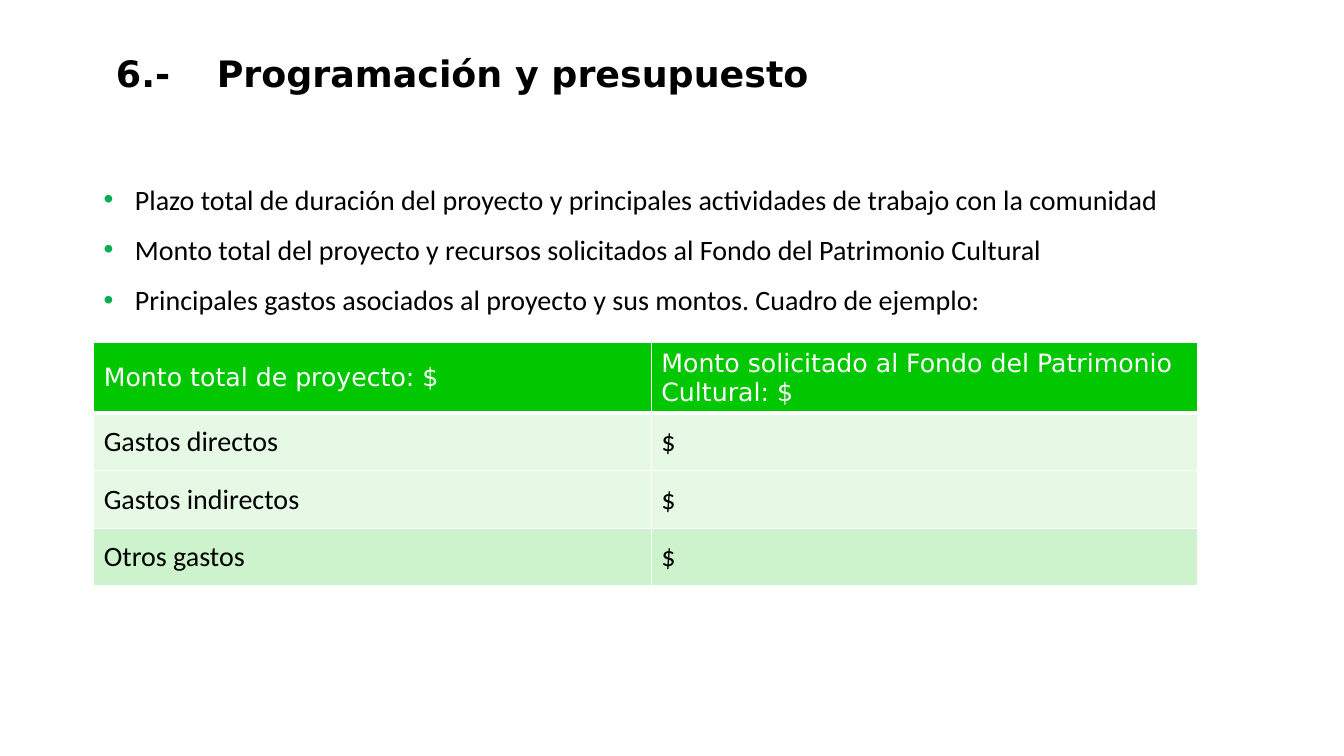
from lxml import etree
from pptx import Presentation, util as u
from pptx.dml.color import RGBColor
from pptx.enum import text as t
from pptx.oxml.ns import qn

HUES = {"ink": "000000", "paper": "FFFFFF", "green": "00C700", "dot": "00B050"}
HEAD = {"name": "DejaVu Sans", "size": u.Pt(26), "bold": True}
TOP = {"name": "DejaVu Sans", "size": u.Pt(18), "bold": False}
BODY = {"name": "Calibri", "size": u.Pt(20), "bold": False}


def add(node, tag, **attrs):
    return etree.SubElement(node, qn(tag), attrs)


def solid(node, hue, alpha=100):
    color = add(add(node, "a:solidFill"), "a:srgbClr", val=HUES[hue])
    if alpha < 100:
        add(color, "a:alpha", val=str(alpha * 1000))


class Deck:
    def __init__(self):
        self.prs = Presentation()
        self.prs.slide_width = u.Inches(13.33)
        self.prs.slide_height = u.Inches(7.5)
        self.slide = self.prs.slides.add_slide(self.prs.slide_layouts[6])

    def label(self, para, words, style, hue="ink"):
        run = para.add_run()
        run.text = words
        for key, val in style.items():
            setattr(run.font, key, val)
        run.font.color.rgb = RGBColor.from_string(HUES[hue])

    def frame(self, box, **form):
        shape = self.slide.shapes.add_textbox(*map(u.Inches, box))
        for key, val in {"word_wrap": True, **form}.items():
            setattr(shape.text_frame, key, val)
        return shape.text_frame

    def title(self, words, box):
        sides = ("left", "top", "right", "bottom")
        form = {f"margin_{side}": 0 for side in sides}
        body = self.frame(box, vertical_anchor=t.MSO_ANCHOR.MIDDLE, **form)
        para = body.paragraphs[0]
        para.line_spacing = 0.9
        tabs = add(para._p.get_or_add_pPr(), "a:tabLst")
        add(tabs, "a:tab", pos=str(u.Inches(1)), algn="l")
        self.label(para, words, HEAD)

    def bullets(self, lines, box):
        body = self.frame(box)
        for i, line in enumerate(lines):
            para = body.add_paragraph() if i else body.paragraphs[0]
            para.line_spacing = 1.5
            props = para._p.get_or_add_pPr()
            dent = u.Inches(0.31)
            props.set("marL", str(dent))
            props.set("indent", str(-dent))
            add(add(props, "a:buClr"), "a:srgbClr", val=HUES["dot"])
            add(props, "a:buFont", typeface="Arial")
            add(props, "a:buChar", char="•")
            self.label(para, line, BODY)

    def cell(self, cell, words, style, hue, alpha, edges):
        cell.vertical_anchor = t.MSO_ANCHOR.MIDDLE
        self.label(cell.text_frame.paragraphs[0], words, style, hue)
        props = cell._tc.get_or_add_tcPr()
        for side, width in edges.items():
            solid(add(props, f"a:ln{side}", w=str(u.Pt(width))), "paper")
        solid(props, "green", alpha)

    def table(self, rows, box, cols, tall, alphas):
        grid = self.slide.shapes.add_table(
            len(rows), len(cols), *map(u.Inches, box)).table
        grid.first_row = grid.horz_banding = False
        for col, wide in zip(grid.columns, cols):
            col.width = u.Inches(wide)
        for r, (row, alpha) in enumerate(zip(rows, alphas)):
            grid.rows[r].height = u.Inches(tall)
            style, hue = (BODY, "ink") if r else (TOP, "paper")
            edges = {"L": 1, "R": 1, "T": 3 if r == 1 else 1,
                     "B": 1 if r else 3}
            for c, words in enumerate(row):
                self.cell(grid.cell(r, c), words, style, hue, alpha, edges)


def main():
    deck = Deck()
    deck.title("6.-\tProgramación y presupuesto", (1.15, 0.16, 12.18, 1.18))
    deck.table([
        ("Monto total de proyecto: $",
         "Monto solicitado al Fondo del Patrimonio Cultural: $"),
        ("Gastos directos", "$"),
        ("Gastos indirectos", "$"),
        ("Otros gastos", "$"),
    ], (0.93, 3.4, 10.95, 2.28), (5.53, 5.42), 0.57, (100, 10, 10, 20))
    deck.bullets([
        "Plazo total de duración del proyecto y principales actividades "
        "de trabajo con la comunidad",
        "Monto total del proyecto y recursos solicitados al Fondo del "
        "Patrimonio Cultural",
        "Principales gastos asociados al proyecto y sus montos. "
        "Cuadro de ejemplo:",
    ], (0.93, 1.59, 11.91, 1.56))
    deck.prs.save("out.pptx")


if __name__ == "__main__":
    main()
